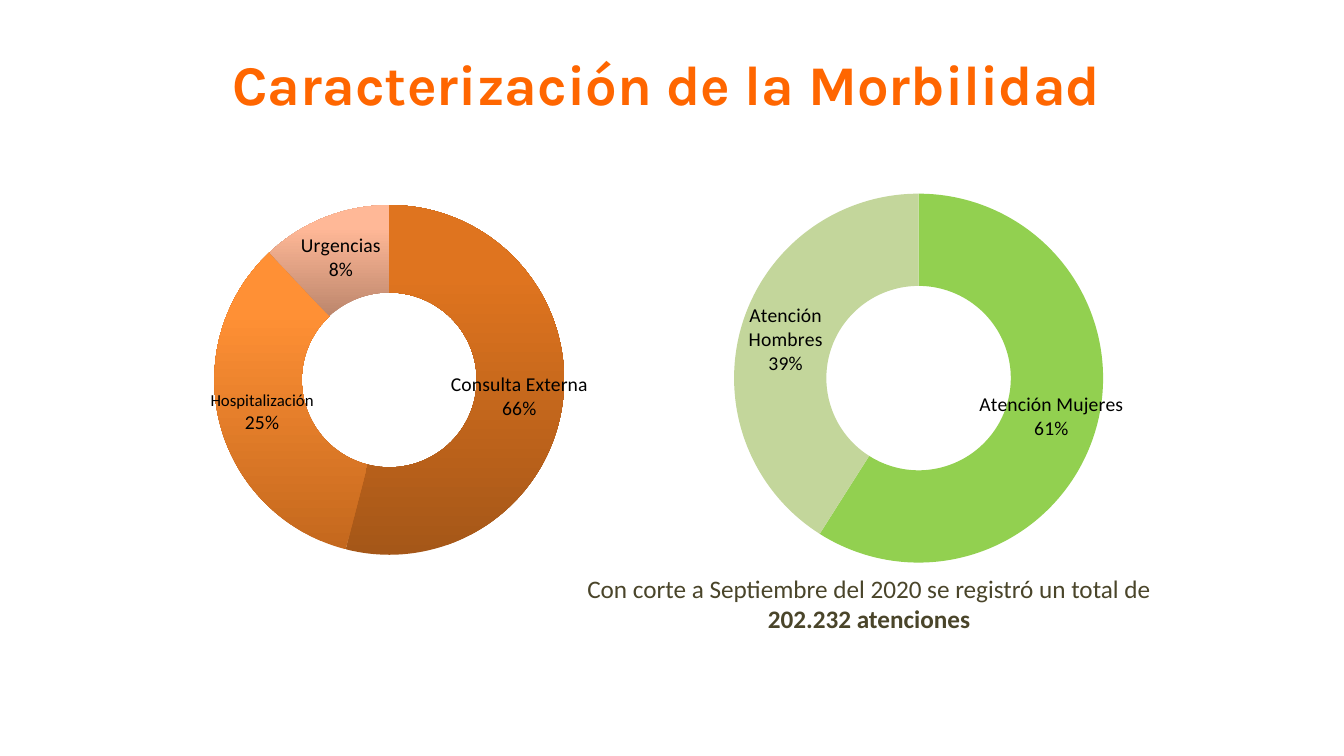
from pptx import Presentation
from pptx.chart.data import CategoryChartData
from pptx.dml.color import RGBColor
from pptx.enum.chart import XL_CHART_TYPE
from pptx.enum.text import PP_ALIGN
from pptx.oxml import parse_xml
from pptx.oxml.ns import nsdecls
from pptx.util import Inches, Pt

prs = Presentation()
prs.slide_width, prs.slide_height = Inches(13.33), Inches(7.5)
s = prs.slides.add_slide(prs.slide_layouts[6])


def rgb(value):
    return RGBColor.from_string(value)


def add_text(box, runs, font, size, color):
    """Add a centred text box; runs are (text, bold) pairs."""
    tf = s.shapes.add_textbox(*map(Inches, box)).text_frame
    tf.word_wrap = True
    p = tf.paragraphs[0]
    p.alignment = PP_ALIGN.CENTER
    for text, bold in runs:
        r = p.add_run()
        r.text = text
        r.font.name, r.font.size, r.font.bold = font, Pt(size), bold
        r.font.color.rgb = rgb(color)
    return p


title = add_text((0, 0.44, 11.75, 0.77),
                 [("Caracterización de la Morbilidad", True)], "Karla", 40, "FF6600")
pPr = title._p.get_or_add_pPr()
pPr.set("marL", str(Inches(1.5)))
pPr.set("indent", str(Inches(-0.03)))

add_text((5.49, 5.64, 6.26, 0.71),
         [("Con corte a Septiembre del 2020 se registró un total de ", False),
          ("202.232 atenciones", True)], "Calibri", 18, "4A452A")

# Box, ring (centre x, centre y, diameter), then one row per slice:
# category, value, label, label size, colours from bottom to top
doughnuts = [
    ((1.08, 1.78, 5.59, 3.86), (3.86, 3.77, 3.47), [
        ("Consulta Externa", 54, "66%", 14, ("A55718", "DF741F")),
        ("Hospitalización", 34, "25%", 12, ("C4681D", "FF9035")),
        ("Urgencias", 12, "8%", 14, ("BC866C", "FFB897"))]),
    ((6.19, 1.78, 5.83, 3.94), (9.11, 3.75, 3.66), [
        ("Atención Mujeres", 59, "61%", 14, ("92D050",)),
        ("Atención Hombres", 41, "39%", 14, ("C3D69B",))]),
]

for box, (cx, cy, diameter), slices in doughnuts:
    data = CategoryChartData()
    data.categories = [row[0] for row in slices]
    data.add_series("Series 1", [row[1] for row in slices])
    chart = s.shapes.add_chart(XL_CHART_TYPE.DOUGHNUT, *map(Inches, box), data).chart
    chart.has_legend = chart.has_title = False
    chart.font.name, chart.font.size = "Calibri", Pt(10)
    chart.font.color.rgb = rgb("000000")

    plot = chart.plots[0]
    plot.vary_by_categories = True
    plot._element.find("{*}holeSize").set("val", "50")
    plot.has_data_labels = True
    labels = plot.data_labels
    labels.show_percentage = labels.show_category_name = True
    labels.show_value = False
    labels.number_format, labels.number_format_is_linked = "0%", False
    labels.font.size = Pt(14)

    left, top, width, height = box
    shares = {"x": (cx - diameter / 2 - left) / width,
              "y": (cy - diameter / 2 - top) / height,
              "w": diameter / width, "h": diameter / height}
    modes = "".join(f'<c:{k}Mode val="edge"/>' for k in "xy")
    sizes = "".join(f'<c:{k} val="{v:.3f}"/>' for k, v in shares.items())
    plot_area = plot._element.getparent()
    for old in plot_area.findall("{*}layout"):
        plot_area.remove(old)
    plot_area.insert(0, parse_xml(
        f'<c:layout {nsdecls("c")}><c:manualLayout><c:layoutTarget val="inner"/>'
        f'{modes}{sizes}</c:manualLayout></c:layout>'))

    for i, (name, _, share, size, colors) in enumerate(slices):
        point = plot.series[0].points[i]
        fill = point.format.fill
        if len(colors) == 1:
            fill.solid()
            fill.fore_color.rgb = rgb(colors[0])
        else:
            fill.gradient()
            fill.gradient_angle = 90
            for stop, color, position in zip(fill.gradient_stops, colors, (0, 0.8)):
                stop.color.rgb = rgb(color)
                stop.position = position
        point.format.line.fill.background()
        p = point.data_label.text_frame.paragraphs[0]
        for text, pt in ((name + "\n", size), (share, 14)):
            r = p.add_run()
            r.text = text
            r.font.name, r.font.size = "Calibri", Pt(pt)
            r.font.color.rgb = rgb("000000")

prs.save("out.pptx")
